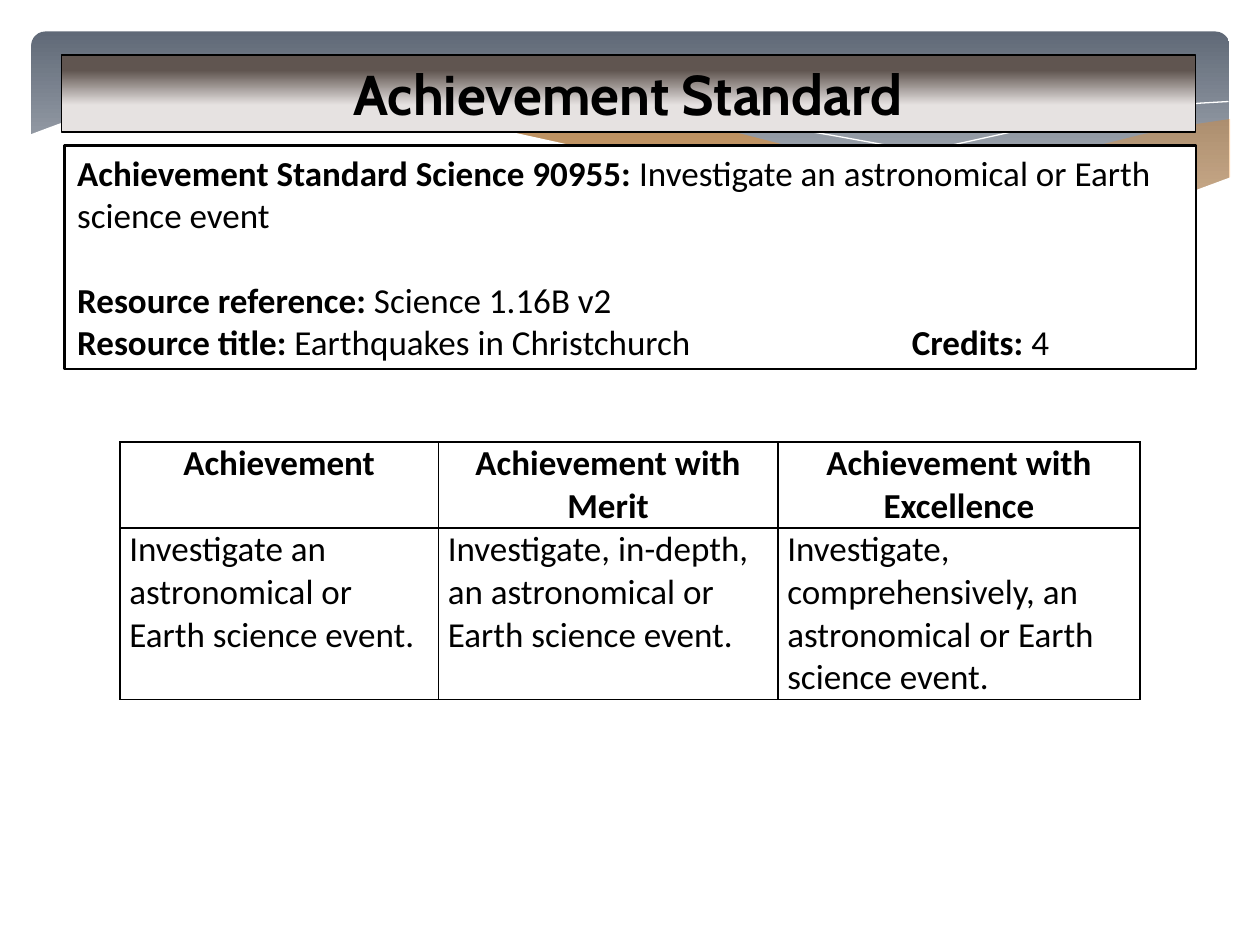
from lxml.etree import SubElement
from pptx import Presentation
from pptx.dml.color import RGBColor
from pptx.enum.shapes import MSO_SHAPE as Preset
from pptx.enum.text import MSO_ANCHOR as Anchor, PP_ALIGN as Align
from pptx.oxml.ns import qn
from pptx.util import Pt

BLACK, WHITE = "000000", "FFFFFF"

RIGHT_SWELL = [
    (703, 68), (683, 71), (652, 77), (620, 85), (580, 94), (542, 103),
    (508, 109), (476, 115), (508, 119), (545, 122), (586, 124), (621, 122),
    (652, 117), (678, 111), (703, 102)]
BROAD_SWELL = [
    (643, 120), (603, 114), (558, 107), (508, 96), (453, 84), (410, 73),
    (370, 66), (335, 62), (302, 59), (260, 58), (225, 59), (206, 62),
    (246, 68), (291, 76), (323, 84), (382, 97), (433, 108), (479, 116),
    (520, 121), (565, 124), (603, 124)]
LONG_CREST = [
    (222, 65), (248, 60), (289, 59), (338, 60), (384, 63), (438, 71),
    (479, 78), (523, 86), (572, 98), (626, 112), (653, 120)]
SHORT_CREST = [
    (441, 109), (484, 97), (539, 84), (580, 75), (624, 67), (655, 62),
    (685, 59), (702, 58)]
FOREGROUND = [
    (704, 101), (677, 111), (647, 118), (612, 122), (571, 123), (523, 120),
    (467, 112), (417, 104), (362, 92), (322, 82), (263, 69), (210, 61),
    (166, 57), (127, 56), (86, 59), (55, 64), (33, 71), (17, 77),
    (17, 161), (704, 161)]

STANDARD = [
    [("Achievement Standard Science 90955: ", True),
     ("Investigate an astronomical or Earth science event", False)],
    [("Resource reference: ", True), ("Science 1.16B v2", False)],
    [("Resource title:", True), (" Earthquakes in Christchurch", False),
     ("\tCredits: ", True), ("4", False)],
]
GRADES = [
    ("Achievement", "Investigate an astronomical or Earth science event."),
    ("Achievement with Merit",
     "Investigate, in-depth, an astronomical or Earth science event."),
    ("Achievement with Excellence",
     "Investigate, comprehensively, an astronomical or Earth science event."),
]


def color(value):
    return RGBColor.from_string(value)


def write(paragraph, text, font="Calibri", size=20, bold=False,
          align=Align.LEFT, before=0, after=0):
    paragraph.alignment = align
    paragraph.space_before, paragraph.space_after = Pt(before), Pt(after)
    run = paragraph.add_run()
    run.text = text
    run.font.name, run.font.size, run.font.bold = font, Pt(size), bold
    run.font.color.rgb = color(BLACK)


def paint(shape, fill=None, opacity=100, line=None, width=0):
    shape.shadow.inherit = False
    if fill is None:
        shape.fill.background()
    elif isinstance(fill, str):
        shape.fill.solid()
        shape.fill.fore_color.rgb = color(fill)
        if opacity < 100:
            tint = shape.fill._xPr.find(".//" + qn("a:srgbClr"))
            SubElement(tint, qn("a:alpha"), val=str(opacity * 1000))
    else:
        shape.fill.gradient()
        shape.fill.gradient_angle = 270
        for stop, (position, value) in zip(shape.fill.gradient_stops, fill):
            stop.position, stop.color.rgb = position, color(value)
    if line is None:
        shape.line.fill.background()
    else:
        shape.line.color.rgb = color(line)
        shape.line.width = Pt(width)


def add_box(slide, box, preset=Preset.RECTANGLE, **style):
    shape = slide.shapes.add_shape(preset, *map(Pt, box))
    paint(shape, **style)
    return shape


def add_curve(slide, origin, points, closed=True, **style):
    left, top = origin
    start, *rest = [(left + x, top + y) for x, y in points]
    builder = slide.shapes.build_freeform(*start, scale=Pt(1))
    builder.add_line_segments(rest, close=closed)
    paint(builder.convert_to_shape(), **style)


def add_banner(slide, box):
    left, top, _, _ = box
    origin = left - 18, top - 18
    panel = add_box(slide, box, Preset.ROUNDED_RECTANGLE,
                    fill=[(0, "606977"), (0.9, "B5BBC3")])
    panel.adjustments[0] = 0.07
    for swell, opacity in ((RIGHT_SWELL, 29), (BROAD_SWELL, 40)):
        add_curve(slide, origin, swell, fill="FF8600", opacity=opacity)
    for crest in (LONG_CREST, SHORT_CREST):
        add_curve(slide, origin, crest, closed=False, line=WHITE)
    add_curve(slide, origin, FOREGROUND, fill=WHITE)


def add_standard(slide, box):
    frame = add_box(slide, box, fill=WHITE, line=BLACK, width=1.5).text_frame
    frame.word_wrap = True
    frame.vertical_anchor = Anchor.TOP
    for index, parts in enumerate(STANDARD):
        paragraph = frame.add_paragraph() if index else frame.paragraphs[0]
        for text, bold in parts:
            write(paragraph, text, bold=bold, before=24.4 if index == 1 else 0)
    tabs = SubElement(paragraph._p.get_or_add_pPr(), qn("a:tabLst"))
    SubElement(tabs, qn("a:tab"), pos=str(Pt(477)), algn="l")


def add_title(slide, box):
    frame = add_box(slide, box, fill=[(0.2, "605550"), (0.65, "E6E2E1")],
                    line=BLACK, width=0.75).text_frame
    frame.word_wrap = True
    frame.vertical_anchor = Anchor.MIDDLE
    write(frame.paragraphs[0], "Achievement Standard", font="Cabin", size=32,
          bold=True, align=Align.CENTER)


def add_borders(cell):
    properties = cell._tc.get_or_add_tcPr()
    for index, side in enumerate(("lnL", "lnR", "lnT", "lnB")):
        border = SubElement(properties, qn("a:" + side), w=str(Pt(1)))
        fill = SubElement(border, qn("a:solidFill"))
        SubElement(fill, qn("a:srgbClr"), val=BLACK)
        properties.insert(index, border)


def add_grades(slide, box):
    table = slide.shapes.add_table(2, len(GRADES), *map(Pt, box)).table
    table.first_row = table.horz_banding = False
    for column, width in zip(table.columns, (182, 194, 207)):
        column.width = Pt(width)
    for row, height in zip(table.rows, (48, 96)):
        row.height = Pt(height)
    for column, texts in enumerate(GRADES):
        for row, text in enumerate(texts):
            cell = table.cell(row, column)
            cell.margin_left = cell.margin_right = Pt(5.4)
            cell.margin_top = cell.margin_bottom = Pt(0)
            cell.fill.background()
            add_borders(cell)
            heading = row == 0
            write(cell.text_frame.paragraphs[0], text, bold=heading,
                  align=Align.CENTER if heading else Align.LEFT,
                  before=2, after=2)


def main():
    deck = Presentation()
    deck.slide_width, deck.slide_height = Pt(720), Pt(540)
    slide = deck.slides.add_slide(deck.slide_layouts[6])
    add_banner(slide, (18, 18, 684.5, 112))
    add_standard(slide, (37, 83, 646.5, 128))
    add_title(slide, (35, 31.5, 648, 44))
    add_grades(slide, (68.5, 252.7, 583, 144))
    deck.save("out.pptx")


if __name__ == "__main__":
    main()
